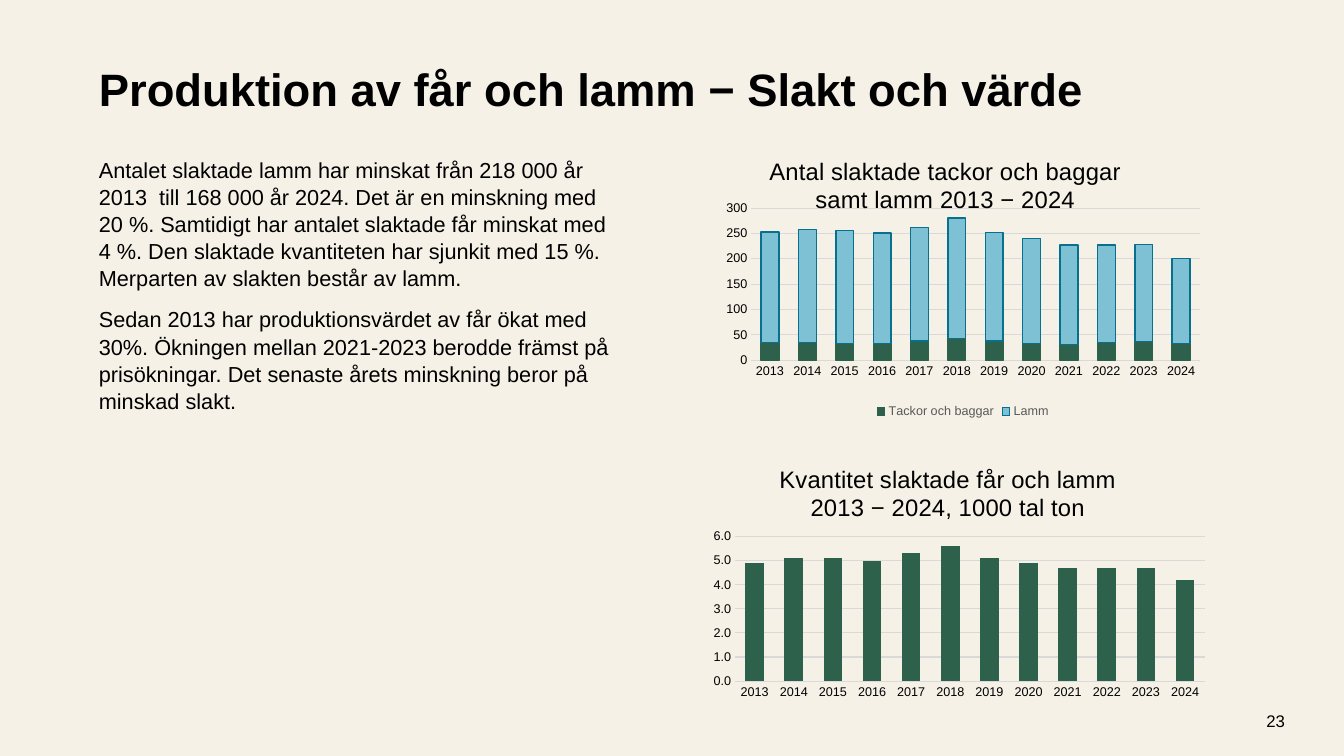
from lxml import etree
from pptx import Presentation
from pptx.chart.data import CategoryChartData
from pptx.dml.color import RGBColor
from pptx.enum.chart import XL_CHART_TYPE, XL_LEGEND_POSITION, XL_TICK_MARK
from pptx.enum.text import MSO_ANCHOR, PP_ALIGN
from pptx.oxml import parse_xml
from pptx.oxml.ns import nsdecls
from pptx.util import Pt

STACKED = XL_CHART_TYPE.COLUMN_STACKED
LEGEND_BOTTOM = XL_LEGEND_POSITION.BOTTOM
NO_TICK = XL_TICK_MARK.NONE
TOP, MIDDLE, BOTTOM = MSO_ANCHOR.TOP, MSO_ANCHOR.MIDDLE, MSO_ANCHOR.BOTTOM
LEFT, RIGHT, CENTER = PP_ALIGN.LEFT, PP_ALIGN.RIGHT, PP_ALIGN.CENTER
PX = 914400 / 100.8
FONT = "Arial"
BLACK, GRAY, GRID = "000000", "595959", "D9D9D9"
GREEN, BLUE, DARK_BLUE = "2E614C", "7FC1D4", "07708C"


def color(value):
    return RGBColor.from_string(value)


def style_font(font, size, value=BLACK, bold=False):
    font.name = FONT
    font.size = Pt(size)
    font.bold = bold
    font.color.rgb = color(value)


presentation = Presentation()
presentation.slide_width = round(1344 * PX)
presentation.slide_height = round(756 * PX)
slide = presentation.slides.add_slide(presentation.slide_layouts[6])
slide.background.fill.solid()
slide.background.fill.fore_color.rgb = color("F5F1E7")

body = (
    "Antalet slaktade lamm har minskat från 218 000 år 2013  till 168 000 år 2024. "
    "Det är en minskning med 20 %. Samtidigt har antalet slaktade får minskat med 4 %. "
    "Den slaktade kvantiteten har sjunkit med 15 %. Merparten av slakten består av lamm.\n"
    "Sedan 2013 har produktionsvärdet av får ökat med 30%. "
    "Ökningen mellan 2021-2023 berodde främst på prisökningar. "
    "Det senaste årets minskning beror på minskad slakt."
)
texts = [
    ("Produktion av får och lamm − Slakt och värde",
     (89, 52, 1027, 69), 32.4, True, BOTTOM, LEFT, 0.9),
    (body, (89, 151, 544, 272), 15.5, False, TOP, LEFT, 1.04),
    ("23", (1178, 701, 117, 40), 12, False, MIDDLE, RIGHT, 1.0),
]
for text, box, size, bold, anchor, alignment, line_spacing in texts:
    text_box = slide.shapes.add_textbox(*[round(length * PX) for length in box])
    text_frame = text_box.text_frame
    text_frame.word_wrap = True
    text_frame.vertical_anchor = anchor
    text_frame.text = text
    for index, paragraph in enumerate(text_frame.paragraphs):
        paragraph.alignment = alignment
        paragraph.line_spacing = line_spacing
        if index:
            paragraph.space_before = Pt(10)
        for run in paragraph.runs:
            style_font(run.font, size, bold=bold)

years = [str(year) for year in range(2013, 2025)]
charts = [
    {
        "title": "Antal slaktade tackor och baggar\nsamt lamm 2013 − 2024",
        "box": (711, 151, 504, 272),
        "title_at": {"x": 0.11, "y": 0.01},
        "plot": {"x": 0.08, "y": 0.21, "w": 0.89, "h": 0.56},
        "scale": (300, 50, "#,##0"),
        "series": [
            ("Tackor och baggar",
             [35, 35, 33, 33, 38, 43, 38, 33, 31, 35, 37, 33], GREEN, GREEN),
            ("Lamm",
             [218, 223, 223, 218, 224, 237, 214, 207, 196, 192, 191, 168], BLUE, DARK_BLUE),
        ],
    },
    {
        "title": "Kvantitet slaktade får och lamm\n2013 − 2024, 1000 tal ton",
        "box": (699, 449, 516, 258),
        "title_at": {"x": 0.15, "y": 0.05},
        "plot": {"x": 0.07, "y": 0.34, "w": 0.91, "h": 0.56},
        "scale": (6, 1, "#\\ ##0.0"),
        "series": [
            ("Series 1",
             [4.9, 5.1, 5.1, 5.0, 5.3, 5.6, 5.1, 4.9, 4.7, 4.7, 4.7, 4.2], GREEN, None),
        ],
    },
]
for item in charts:
    data = CategoryChartData()
    data.categories = years
    for name, values, fill, line in item["series"]:
        data.add_series(name, values)
    box = [round(length * PX) for length in item["box"]]
    chart = slide.shapes.add_chart(STACKED, *box, data).chart
    style_font(chart.font, 10)

    title_frame = chart.chart_title.text_frame
    title_frame.text = item["title"]
    for paragraph in title_frame.paragraphs:
        paragraph.alignment = CENTER
        for run in paragraph.runs:
            style_font(run.font, 17)
    chart.chart_title.include_in_layout = False

    plot = chart.plots[0]
    plot.gap_width = 110
    plot.overlap = 100
    plot.vary_by_categories = False
    for series, (name, values, fill, line) in zip(plot.series, item["series"]):
        series.format.fill.solid()
        series.format.fill.fore_color.rgb = color(fill)
        if line:
            series.format.line.color.rgb = color(line)
            series.format.line.width = Pt(1)

    category_axis, value_axis = chart.category_axis, chart.value_axis
    for axis in (category_axis, value_axis):
        axis.major_tick_mark = NO_TICK
        axis.minor_tick_mark = NO_TICK
        style_font(axis.tick_labels.font, 9)
    value_axis.format.line.fill.background()
    for axis_line in (category_axis.format.line, value_axis.major_gridlines.format.line):
        axis_line.color.rgb = color(GRID)
        axis_line.width = Pt(0.75)
    value_axis.minimum_scale = 0
    value_axis.maximum_scale, value_axis.major_unit, number_format = item["scale"]
    value_axis.tick_labels.number_format = number_format
    value_axis.tick_labels.number_format_is_linked = False

    chart.has_legend = len(item["series"]) > 1
    if chart.has_legend:
        chart.legend.position = LEGEND_BOTTOM
        chart.legend.include_in_layout = False
        style_font(chart.legend.font, 9, GRAY)

    title_element = chart.chart_title._element
    plot_element = plot._element.getparent()
    for parent, place, index in (
        (title_element, item["title_at"], 1),
        (plot_element, item["plot"], 0),
    ):
        for old_layout in parent.findall("{*}layout"):
            parent.remove(old_layout)
        layout = parse_xml(f"<c:layout {nsdecls('c')}><c:manualLayout/></c:layout>")
        manual = layout[0]
        namespace = etree.QName(manual).namespace
        settings = {"layoutTarget": "inner"} if "w" in place else {}
        settings.update(xMode="edge", yMode="edge", **place)
        for tag, value in settings.items():
            etree.SubElement(manual, f"{{{namespace}}}{tag}").set("val", str(value))
        parent.insert(index, layout)

presentation.save("out.pptx")
